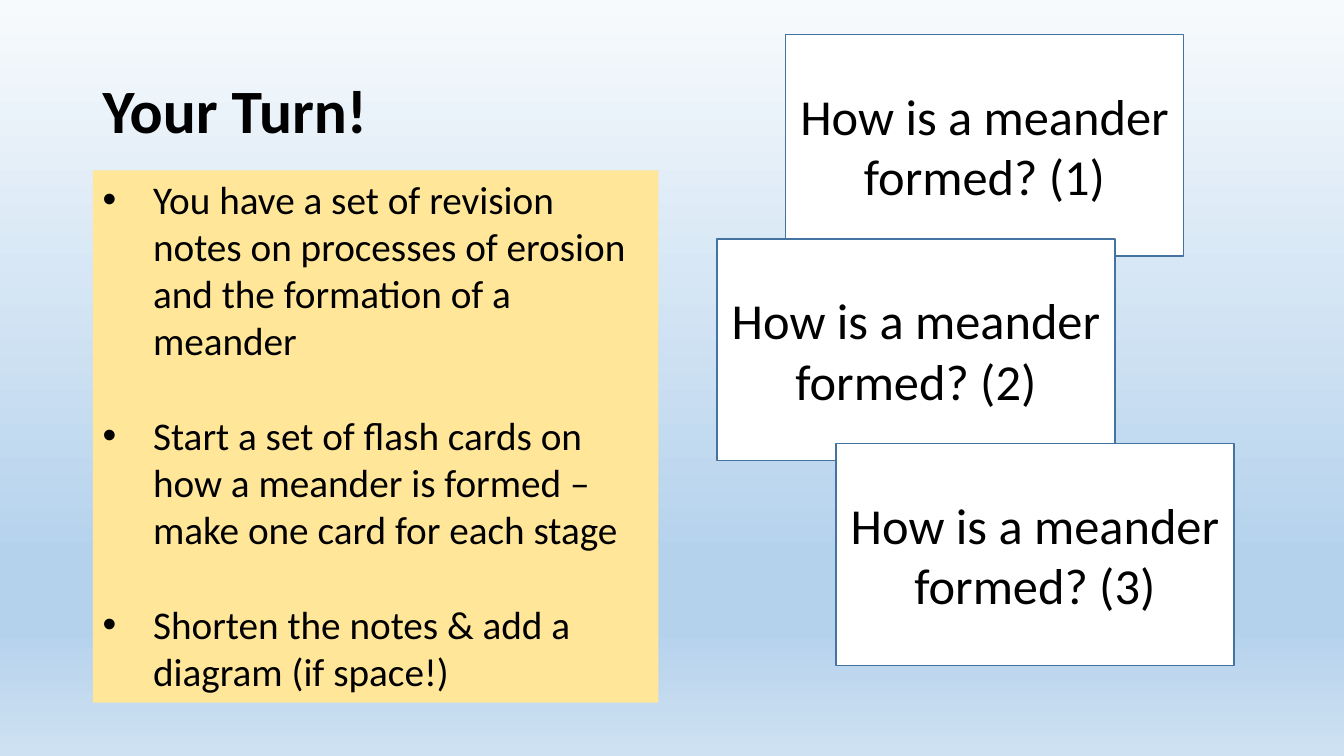
"""Build the "Your Turn!" slide with a task list and three flash cards."""
from dataclasses import dataclass
from typing import Any

from lxml.etree import SubElement
from pptx import Presentation
from pptx.dml.color import RGBColor
from pptx.enum.shapes import MSO_SHAPE as Preset
from pptx.enum.text import MSO_ANCHOR as Anchor, PP_ALIGN as Align
from pptx.oxml.ns import qn
from pptx.util import Pt

EMU_PER_PX = 9144
COLOURS = {
    "sky_top": "F7FAFD",
    "sky_band": "B5D2EC",
    "sky_foot": "CEE1F2",
    "note": "FFE699",
    "card": "FFFFFF",
    "card_line": "43739E",
    "text": "000000",
}
SKY_STOPS = [(0, "sky_top"), (74, "sky_band"), (83, "sky_band"), (100, "sky_foot")]
FONT = "Calibri"
CARD_SIZE = (395, 220)
BULLET_INDENT = 50
TASKS = [
    "You have a set of revision notes on processes of erosion and the formation of a meander",
    "Start a set of flash cards on how a meander is formed – make one card for each stage",
    "Shorten the notes & add a diagram (if space!)",
]


@dataclass(frozen=True)
class Panel:
    box: tuple[int, int, int, int]
    lines: list[str]
    size: int
    fill: str | None = None
    line: str | None = None
    bold: bool = False
    bullets: bool = False
    anchor: Anchor = Anchor.MIDDLE
    align: Align = Align.LEFT
    spacing: float = 1.0


CARD_CORNERS = [(779, 34), (711, 237), (829, 440)]
PANELS = [
    Panel((92, 40, 1150, 145), ["Your Turn!"], 44, bold=True, spacing=0.9),
    Panel((92, 169, 561, 528), TASKS, 28, fill="note", bullets=True, anchor=Anchor.TOP),
] + [
    Panel((*corner, *CARD_SIZE), [f"How is a meander formed? ({number})"], 36,
          fill="card", line="card_line", align=Align.CENTER)
    for number, corner in enumerate(CARD_CORNERS, 1)
]


def px(length: int) -> int:
    return length * EMU_PER_PX


def colour(name: str) -> RGBColor:
    return RGBColor.from_string(COLOURS[name])


def apply_format(target: Any, values: dict[str, Any]) -> None:
    for name, value in values.items():
        setattr(target, name, value)


def paint_sky(slide: Any) -> None:
    fill = slide.background.fill
    fill.gradient()
    fill.gradient_angle = 270
    stops = slide.element.find(".//" + qn("a:gsLst"))
    for stop in list(stops):
        stops.remove(stop)
    for percent, name in SKY_STOPS:
        stop = SubElement(stops, qn("a:gs"), pos=str(percent * 1000))
        SubElement(stop, qn("a:srgbClr"), val=COLOURS[name])


def add_bullet(paragraph: Any) -> None:
    properties = paragraph._p.get_or_add_pPr()
    properties.set("marL", str(px(BULLET_INDENT)))
    properties.set("indent", str(-px(BULLET_INDENT)))
    SubElement(properties, qn("a:buFont"), typeface="Arial")
    SubElement(properties, qn("a:buChar"), char="•")


def add_panel(slide: Any, panel: Panel) -> None:
    box = [px(length) for length in panel.box]
    if panel.fill:
        shape = slide.shapes.add_shape(Preset.RECTANGLE, *box)
        shape.shadow.inherit = False
        shape.fill.solid()
        shape.fill.fore_color.rgb = colour(panel.fill)
        if panel.line:
            shape.line.color.rgb = colour(panel.line)
            shape.line.width = Pt(1)
        else:
            shape.line.fill.background()
    else:
        shape = slide.shapes.add_textbox(*box)
    frame = shape.text_frame
    apply_format(frame, {"word_wrap": True, "vertical_anchor": panel.anchor})
    for index, line in enumerate(panel.lines):
        paragraph = frame.add_paragraph() if index else frame.paragraphs[0]
        apply_format(paragraph, {
            "text": line,
            "alignment": panel.align,
            "line_spacing": panel.spacing,
            "space_before": Pt(34 if index else 0),
        })
        font = paragraph.runs[0].font
        apply_format(font, {"name": FONT, "size": Pt(panel.size), "bold": panel.bold})
        font.color.rgb = colour("text")
        if panel.bullets:
            add_bullet(paragraph)


def main() -> None:
    presentation = Presentation()
    apply_format(presentation, {"slide_width": px(1333), "slide_height": px(750)})
    slide = presentation.slides.add_slide(presentation.slide_layouts[6])
    paint_sky(slide)
    for panel in PANELS:
        add_panel(slide, panel)
    presentation.save("out.pptx")


if __name__ == "__main__":
    main()
